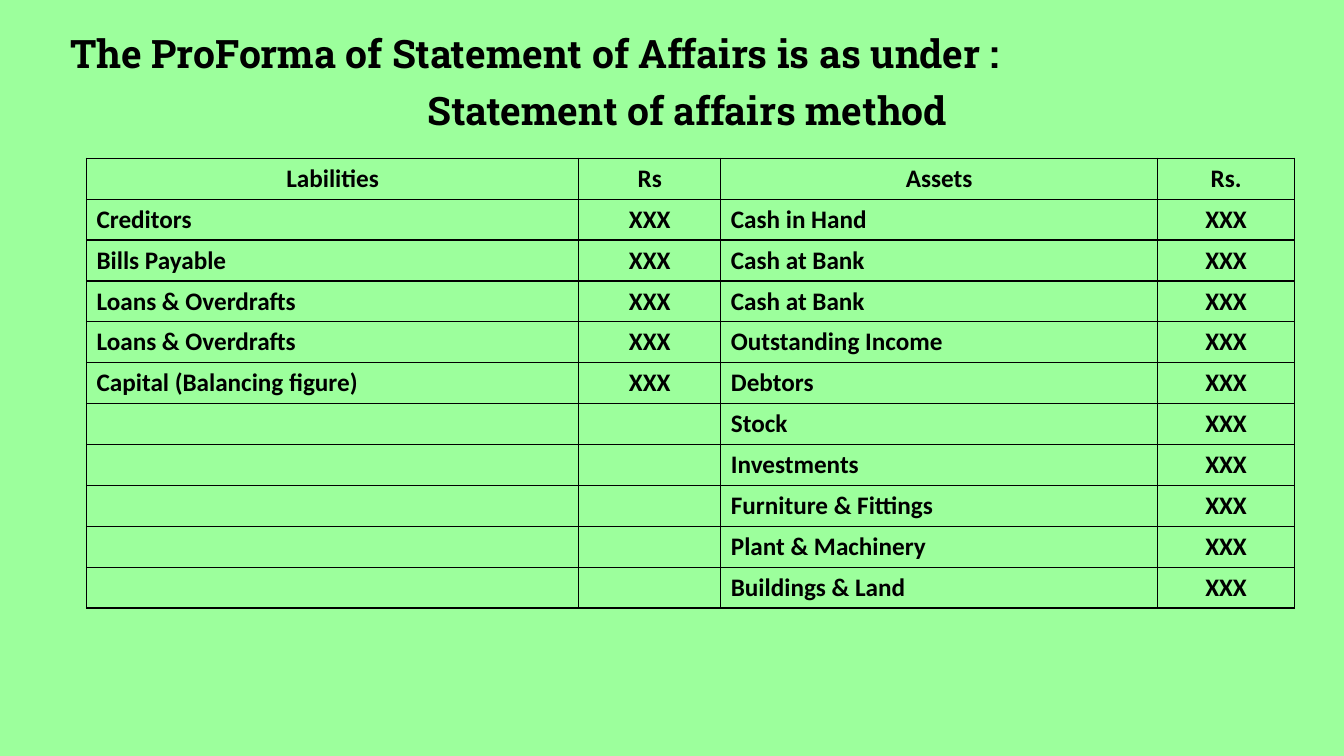
from itertools import zip_longest

from lxml import etree
from pptx import Presentation
from pptx import util as u
from pptx.dml.color import RGBColor
from pptx.enum import text
from pptx.oxml.ns import qn

COLOURS = {"background": "9CFF9C", "ink": "000000"}
HEADINGS = [
    ("The ProForma of Statement of Affairs is as under :", text.PP_ALIGN.LEFT),
    ("Statement of affairs method ", text.PP_ALIGN.CENTER),
]
LIABILITIES = ["Creditors", "Bills Payable", "Loans & Overdrafts",
               "Loans & Overdrafts", "Capital (Balancing figure)"]
ASSETS = ["Cash in Hand", "Cash at Bank", "Cash at Bank", "Outstanding Income",
          "Debtors", "Stock", "Investments", "Furniture & Fittings",
          "Plant & Machinery", "Buildings & Land"]
AMOUNT = "XXX"
COLUMN_WIDTHS = [12.4, 3.58, 11, 3.46]


def colour(name):
    """Return the named colour."""
    return RGBColor.from_string(COLOURS[name])


def add_words(paragraph, words, font, size):
    """Add one bold run to a paragraph."""
    run = paragraph.add_run()
    run.text = words
    run.font.name = font
    run.font.size = u.Pt(size)
    run.font.bold = True
    run.font.color.rgb = colour("ink")


def add_headings(slide, left, top, width, height):
    """Place the two heading lines in the given box, in centimetres."""
    box = slide.shapes.add_textbox(u.Cm(left), u.Cm(top), u.Cm(width), u.Cm(height))
    frame = box.text_frame
    frame.word_wrap = True
    frame.auto_size = text.MSO_AUTO_SIZE.TEXT_TO_FIT_SHAPE
    for index, (words, alignment) in enumerate(HEADINGS):
        heading = frame.add_paragraph() if index else frame.paragraphs[0]
        heading.alignment = alignment
        heading.line_spacing = 0.9
        heading.space_before = u.Pt(10)
        add_words(heading, words, "Roboto Slab", 28)


def outline_cell(cell):
    """Draw a thin line on all four sides of a cell."""
    properties = cell._tc.get_or_add_tcPr()
    for index, side in enumerate(("a:lnL", "a:lnR", "a:lnT", "a:lnB")):
        line = etree.Element(qn(side), w=str(u.Pt(1)))
        fill = etree.SubElement(line, qn("a:solidFill"))
        etree.SubElement(fill, qn("a:srgbClr"), val=COLOURS["ink"])
        properties.insert(index, line)


def add_statement(slide, left, top, width, height):
    """Place the statement of affairs in the given box, in centimetres."""
    entries = [("Labilities", "Rs", "Assets", "Rs.")]
    for liability, asset in zip_longest(LIABILITIES, ASSETS, fillvalue=""):
        entries.append((liability, AMOUNT if liability else "", asset, AMOUNT))
    statement = slide.shapes.add_table(
        len(entries), len(COLUMN_WIDTHS),
        u.Cm(left), u.Cm(top), u.Cm(width), u.Cm(height)).table
    statement.first_row = False
    statement.horz_banding = False
    for column, share in zip(statement.columns, COLUMN_WIDTHS):
        column.width = u.Cm(width * share / sum(COLUMN_WIDTHS))
    for row, entry in enumerate(entries):
        for column, words in enumerate(entry):
            cell = statement.cell(row, column)
            cell.fill.background()
            outline_cell(cell)
            if words:
                paragraph = cell.text_frame.paragraphs[0]
                if row == 0 or column % 2:
                    paragraph.alignment = text.PP_ALIGN.CENTER
                add_words(paragraph, words, "Calibri", 18)


def main():
    """Build and save the slide."""
    deck = Presentation()
    deck.slide_width, deck.slide_height = u.Cm(33.87), u.Cm(19.05)
    slide = deck.slides.add_slide(deck.slide_layouts[6])
    slide.background.fill.solid()
    slide.background.fill.fore_color.rgb = colour("background")
    add_headings(slide, 1.52, 0.76, 31.83, 17.15)
    add_statement(slide, 2.18, 3.99, 30.45, 11.33)
    deck.save("out.pptx")


if __name__ == "__main__":
    main()
